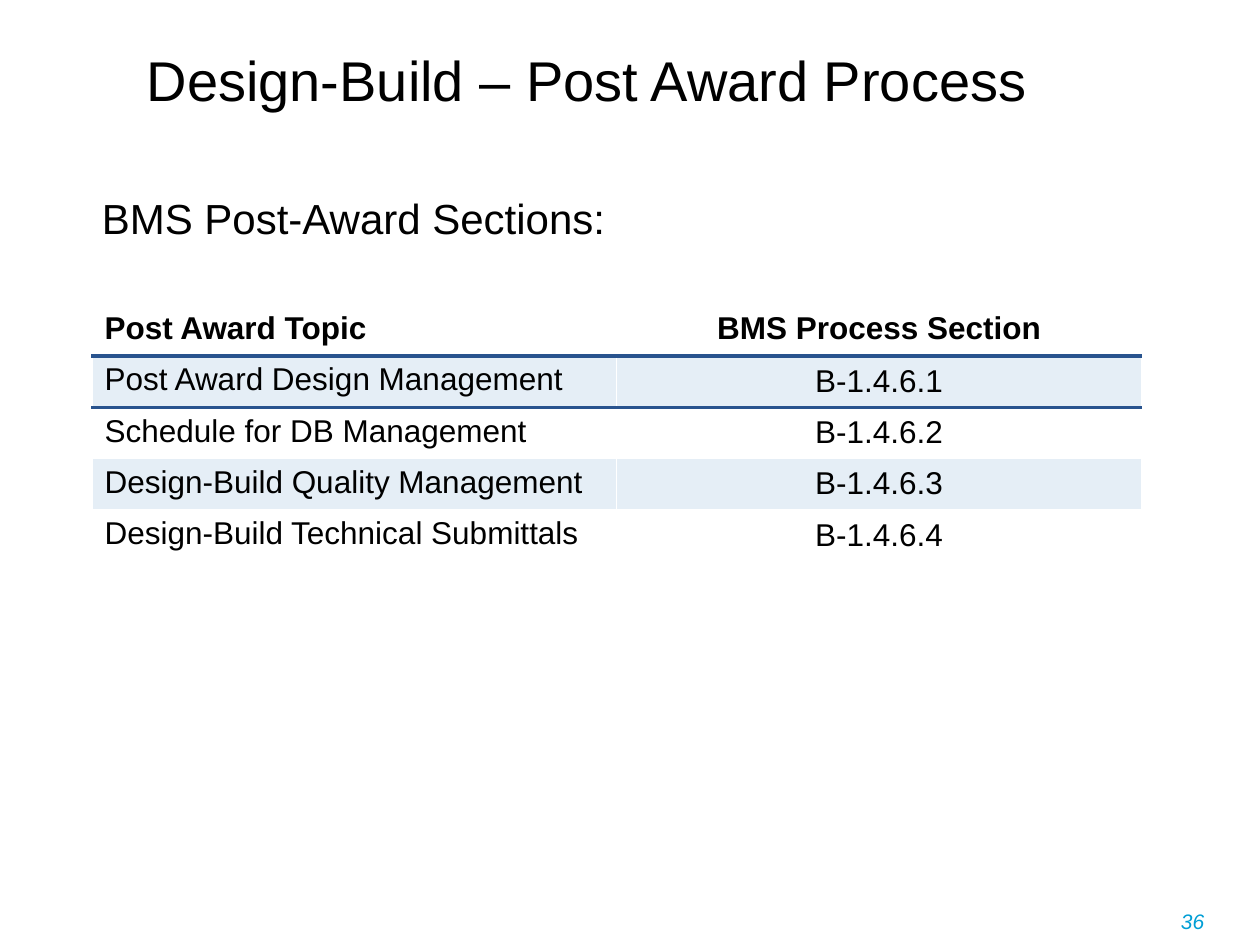
from lxml import etree
from pptx import Presentation
from pptx.dml.color import RGBColor
from pptx.enum.text import MSO_ANCHOR, PP_ALIGN
from pptx.oxml.ns import qn
from pptx.util import Inches, Pt

LEFT, CENTER = PP_ALIGN.LEFT, PP_ALIGN.CENTER
TOP, MIDDLE = MSO_ANCHOR.TOP, MSO_ANCHOR.MIDDLE
TITLE_ONLY = 5
BLACK, WHITE, BAND, RULE, CYAN = "000000", "FFFFFF", "E5EEF6", "28538E", "009ED5"

HEAD = ("Post Award Topic", "BMS Process Section")
TOPICS = (
    "Post Award Design Management",
    "Schedule for DB Management",
    "Design-Build Quality Management",
    "Design-Build Technical Submittals",
)


def color(code):
    return RGBColor.from_string(code)


def write(frame, text, size=18, ink=BLACK, bold=False, italic=False,
          align=LEFT, anchor=TOP, after=0):
    frame.word_wrap = True
    frame.vertical_anchor = anchor
    para = frame.paragraphs[0]
    para.alignment = align
    para.space_after = Pt(after)
    run = para.add_run()
    run.text = text
    font = run.font
    font.name, font.size = "Arial", Pt(size)
    font.bold, font.italic = bold, italic
    font.color.rgb = color(ink)


def add_title(slide, box, text):
    title = slide.shapes.title
    title.left, title.top, title.width, title.height = map(Inches, box)
    write(title.text_frame, text, size=32, align=CENTER, anchor=MIDDLE)


def add_text(slide, box, text, **style):
    shape = slide.shapes.add_textbox(*map(Inches, box))
    write(shape.text_frame, text, **style)


def add_edge(cell, side, code, width):
    """Draw one cell border; call in the order L, R, T, B, before the fill."""
    props = cell._tc.get_or_add_tcPr()
    line = etree.SubElement(props, qn(f"a:ln{side}"), w=str(Pt(width)))
    fill = etree.SubElement(line, qn("a:solidFill"))
    etree.SubElement(fill, qn("a:srgbClr"), val=code)


def add_table(slide, box, rows):
    """Banded table with a rule above and below the first body row."""
    shape = slide.shapes.add_table(len(rows), len(rows[0]), *map(Inches, box))
    table = shape.table
    thin, thick = (WHITE, 1), (RULE, 2.25)
    for r, row in enumerate(rows):
        for c, text in enumerate(row):
            cell = table.cell(r, c)
            edges = {
                "L": thin,
                "R": thin,
                "T": thick if r in (1, 2) else thin,
                "B": thick if r in (0, 1) else thin,
            }
            for side, edge in edges.items():
                add_edge(cell, side, *edge)
            cell.fill.solid()
            cell.fill.fore_color.rgb = color(BAND if r % 2 else WHITE)
            write(cell.text_frame, text, bold=r == 0,
                  align=CENTER if c else LEFT)
            cell.vertical_anchor = MIDDLE if r and c else TOP


def main():
    deck = Presentation()
    deck.slide_width, deck.slide_height = Inches(10), Inches(7.5)
    slide = deck.slides.add_slide(deck.slide_layouts[TITLE_ONLY])
    add_title(slide, (0.26, 0.17, 8.8, 0.91), "Design-Build – Post Award Process")
    add_text(slide, (0.71, 1.48, 8.85, 0.6), "BMS Post-Award Sections:",
             size=24, after=6)
    body = [(topic, f"B-1.4.6.{n}") for n, topic in enumerate(TOPICS, 1)]
    add_table(slide, (0.73, 2.42, 8.33, 2.03), [HEAD, *body])
    add_text(slide, (8.93, 7.16, 1.07, 0.34), "36",
             size=12, ink=CYAN, italic=True, align=CENTER)
    deck.save("out.pptx")


if __name__ == "__main__":
    main()
